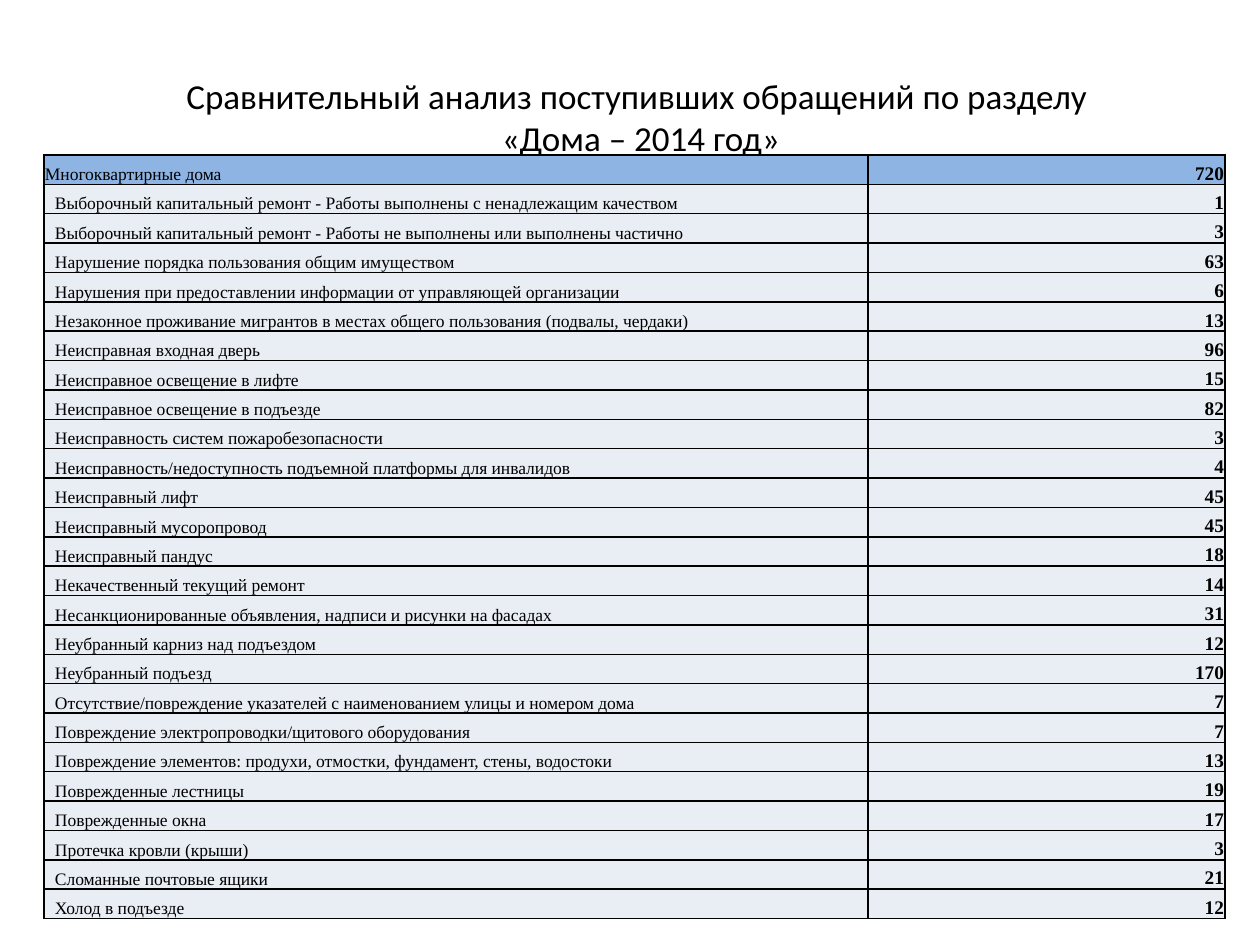
from typing import NamedTuple

from lxml.etree import SubElement
from pptx import Presentation
from pptx.dml.color import RGBColor
from pptx.enum.text import MSO_ANCHOR, PP_ALIGN
from pptx.oxml.ns import qn
from pptx.util import Emu, Pt

EMU_PER_PX = 914400 / 126

BLACK = RGBColor(0x00, 0x00, 0x00)
TOTAL_BLUE = RGBColor(0x8E, 0xB4, 0xE3)
ROW_GREY = RGBColor(0xE9, 0xED, 0xF4)


class Complaint(NamedTuple):
    topic: str
    count: int


TOTAL = Complaint("Многоквартирные дома", 720)
COMPLAINTS = [
    Complaint("Выборочный капитальный ремонт - Работы выполнены с ненадлежащим качеством", 1),
    Complaint("Выборочный капитальный ремонт - Работы не выполнены или выполнены частично", 3),
    Complaint("Нарушение порядка пользования общим имуществом", 63),
    Complaint("Нарушения при предоставлении информации от управляющей организации", 6),
    Complaint("Незаконное проживание мигрантов в местах общего пользования (подвалы, чердаки)", 13),
    Complaint("Неисправная входная дверь", 96),
    Complaint("Неисправное освещение в лифте", 15),
    Complaint("Неисправное освещение в подъезде", 82),
    Complaint("Неисправность систем пожаробезопасности", 3),
    Complaint("Неисправность/недоступность подъемной платформы для инвалидов", 4),
    Complaint("Неисправный лифт", 45),
    Complaint("Неисправный мусоропровод", 45),
    Complaint("Неисправный пандус", 18),
    Complaint("Некачественный текущий ремонт", 14),
    Complaint("Несанкционированные объявления, надписи и рисунки на фасадах", 31),
    Complaint("Неубранный карниз над подъездом", 12),
    Complaint("Неубранный подъезд", 170),
    Complaint("Отсутствие/повреждение указателей с наименованием улицы и номером дома", 7),
    Complaint("Повреждение электропроводки/щитового оборудования", 7),
    Complaint("Повреждение элементов: продухи, отмостки, фундамент, стены, водостоки", 13),
    Complaint("Поврежденные лестницы", 19),
    Complaint("Поврежденные окна", 17),
    Complaint("Протечка кровли (крыши)", 3),
    Complaint("Сломанные почтовые ящики", 21),
    Complaint("Холод в подъезде", 12),
]


def px(length: int) -> Emu:
    return Emu(round(length * EMU_PER_PX))


def add_borders(cell) -> None:
    properties = cell._tc.get_or_add_tcPr()
    for position, side in enumerate(("lnL", "lnR", "lnT", "lnB")):
        line = SubElement(properties, qn(f"a:{side}"), w=str(Pt(1)))
        fill = SubElement(line, qn("a:solidFill"))
        SubElement(fill, qn("a:srgbClr"), val=str(BLACK))
        properties.insert(position, line)  # borders precede the cell fill


def fill_cell(cell, text: str, fill: RGBColor, size: int, bold: bool,
              align: PP_ALIGN, indent: int) -> None:
    cell.text = text
    cell.vertical_anchor = MSO_ANCHOR.BOTTOM
    cell.margin_left = px(indent)
    cell.margin_top = cell.margin_right = px(1)
    cell.margin_bottom = 0
    cell.fill.solid()
    cell.fill.fore_color.rgb = fill
    add_borders(cell)
    paragraph = cell.text_frame.paragraphs[0]
    paragraph.alignment = align
    paragraph.font.name = "Times New Roman"
    paragraph.font.size = Pt(size)
    paragraph.font.bold = bold
    paragraph.font.color.rgb = BLACK


def add_title(slide) -> None:
    heading = slide.shapes.add_textbox(px(74), px(37), px(1134), px(158)).text_frame
    heading.word_wrap = True
    heading.vertical_anchor = MSO_ANCHOR.MIDDLE
    paragraph = heading.paragraphs[0]
    paragraph.text = "Сравнительный анализ поступивших обращений по разделу \v«Дома – 2014 год»"
    paragraph.alignment = PP_ALIGN.CENTER
    paragraph.font.name = "Calibri"
    paragraph.font.size = Pt(20)
    paragraph.font.color.rgb = BLACK


def add_complaints_table(slide) -> None:
    entries = [TOTAL, *COMPLAINTS]
    table = slide.shapes.add_table(len(entries), 2, px(44), px(155), px(1181), px(764)).table
    table.columns[0].width = px(824)
    table.columns[1].width = px(357)
    for row, entry in zip(table.rows, entries):
        is_total = entry is TOTAL
        fill = TOTAL_BLUE if is_total else ROW_GREY
        topic_cell, count_cell = row.cells
        fill_cell(topic_cell, entry.topic, fill, 10, False, PP_ALIGN.LEFT, 1 if is_total else 11)
        fill_cell(count_cell, str(entry.count), fill, 11, True, PP_ALIGN.RIGHT, 1)


def main() -> None:
    presentation = Presentation()
    presentation.slide_width = px(1260)
    presentation.slide_height = px(945)
    slide = presentation.slides.add_slide(presentation.slide_layouts[6])
    add_title(slide)
    add_complaints_table(slide)
    presentation.save("out.pptx")


if __name__ == "__main__":
    main()
